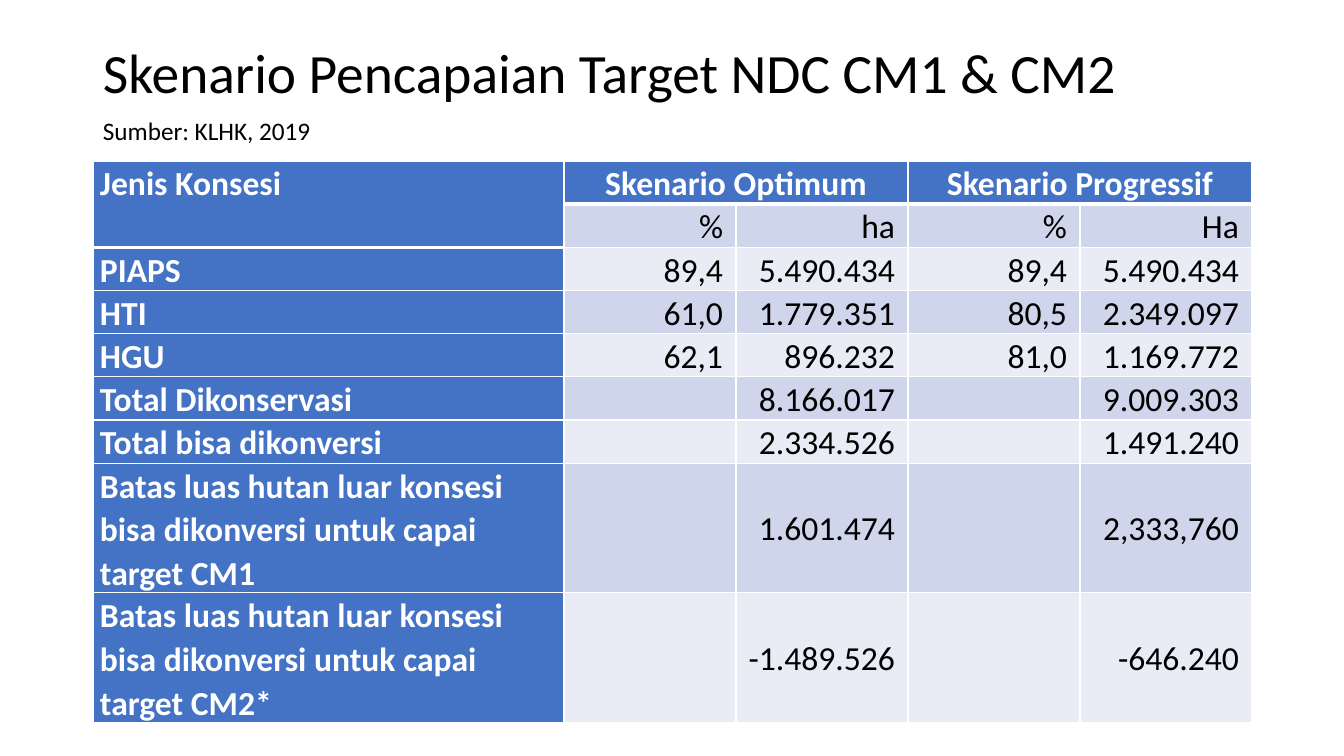
from dataclasses import dataclass

import pptx
import pptx.dml.color
import pptx.enum.text
import pptx.oxml.ns
import pptx.util
from lxml import etree

RGBColor = pptx.dml.color.RGBColor
Align = pptx.enum.text.PP_ALIGN
Anchor = pptx.enum.text.MSO_ANCHOR

SLIDE_W, SLIDE_H = 1344, 756
EMU_PER_PX = 12192000 / SLIDE_W

BLACK = RGBColor(0x00, 0x00, 0x00)
WHITE = RGBColor(0xFF, 0xFF, 0xFF)
BLUE = RGBColor(0x44, 0x72, 0xC4)
BANDS = (RGBColor(0xCF, 0xD5, 0xEA), RGBColor(0xE9, 0xEB, 0xF5))

LEFT, CONTENT_W = 93, 1159
TABLE_TOP = 161
COL_WIDTHS = (471, 172, 172, 172, 172)
ROW_H, TALL_ROW_H = 39, 104
CELL_PAD, NUMBER_PAD = 7, 13
TABLE_SIZE = 24


@dataclass(frozen=True)
class TextBox:
    text: str
    top: int
    width: int
    height: int
    size: float
    line_spacing: float
    wrap: bool


@dataclass(frozen=True)
class Concession:
    label: str
    values: tuple[str, str, str, str]
    height: int = ROW_H


TEXT_BOXES = (
    TextBox("Skenario Pencapaian Target NDC CM1 & CM2", 40, CONTENT_W, 71, 39.6, 0.9, True),
    TextBox("Sumber: KLHK, 2019", 110, 231, 40, 18, 1, False),
)

SCENARIOS = ("Skenario Optimum", "Skenario Progressif")

# The first row holds the units; its label spans the scenario header row too.
ROWS = (
    Concession("", ("%", "ha", "%", "Ha")),
    Concession("PIAPS", ("89,4", "5.490.434", "89,4", "5.490.434")),
    Concession("HTI", ("61,0", "1.779.351", "80,5", "2.349.097")),
    Concession("HGU", ("62,1", "896.232", "81,0", "1.169.772")),
    Concession("Total Dikonservasi", ("", "8.166.017", "", "9.009.303")),
    Concession("Total bisa dikonversi", ("", "2.334.526", "", "1.491.240")),
    Concession("Batas luas hutan luar konsesi bisa dikonversi untuk capai target CM1",
               ("", "1.601.474", "", "2,333,760"), TALL_ROW_H),
    Concession("Batas luas hutan luar konsesi bisa dikonversi untuk capai target CM2*",
               ("", "-1.489.526", "", "-646.240"), TALL_ROW_H),
)


def px(n: int) -> pptx.util.Emu:
    return pptx.util.Emu(round(n * EMU_PER_PX))


def write(tf, text: str, *, size: float, color: RGBColor = BLACK, bold: bool = False,
          align=Align.LEFT, line_spacing: float = 1) -> None:
    p = tf.paragraphs[0]
    p.alignment = align
    p.line_spacing = line_spacing
    if not text:
        p.font.size = pptx.util.Pt(size)
        return
    r = p.add_run()
    r.text = text
    r.font.name = "Calibri"
    r.font.size = pptx.util.Pt(size)
    r.font.bold = bold
    r.font.color.rgb = color


def add_text_box(slide, box: TextBox) -> None:
    sp = slide.shapes.add_textbox(px(LEFT), px(box.top), px(box.width), px(box.height))
    tf = sp.text_frame
    tf.word_wrap = box.wrap
    tf.vertical_anchor = Anchor.MIDDLE
    write(tf, box.text, size=box.size, line_spacing=box.line_spacing)


def set_borders(cell, bottom: int) -> None:
    """Draw white borders, 1 pt wide except for the bottom one."""
    tc_pr = cell._tc.get_or_add_tcPr()
    qn = pptx.oxml.ns.qn
    for side, width in (("L", 1), ("R", 1), ("T", 1), ("B", bottom)):
        ln = etree.SubElement(tc_pr, qn(f"a:ln{side}"), w=str(pptx.util.Pt(width)))
        fill = etree.SubElement(ln, qn("a:solidFill"))
        etree.SubElement(fill, qn("a:srgbClr"), val=str(WHITE))


def fill_cell(cell, text: str, fill: RGBColor, *, color: RGBColor = BLACK, bold: bool = False,
              align=Align.LEFT, anchor=Anchor.TOP, bottom: int = 1) -> None:
    set_borders(cell, bottom)
    cell.fill.solid()
    cell.fill.fore_color.rgb = fill
    cell.margin_left = px(CELL_PAD)
    cell.margin_right = px(NUMBER_PAD if align == Align.RIGHT else CELL_PAD)
    cell.margin_top = cell.margin_bottom = 0
    cell.vertical_anchor = anchor
    write(cell.text_frame, text, size=TABLE_SIZE, color=color, bold=bold, align=align,
          line_spacing=1.07)


def fill_header_cell(cell, text: str, *, align=Align.LEFT, bottom: int = 1) -> None:
    fill_cell(cell, text, BLUE, color=WHITE, bold=True, align=align, bottom=bottom)


def add_scenario_table(slide) -> None:
    heights = (ROW_H, *(row.height for row in ROWS))
    frame = slide.shapes.add_table(len(heights), len(COL_WIDTHS), px(LEFT), px(TABLE_TOP),
                                   px(CONTENT_W), px(sum(heights)))
    table = frame.table
    table.horz_banding = False
    table.first_row = False
    for column, width in zip(table.columns, COL_WIDTHS):
        column.width = px(width)
    for row, height in zip(table.rows, heights):
        row.height = px(height)

    fill_header_cell(table.cell(0, 0), "Jenis Konsesi", bottom=3)
    for i, scenario in enumerate(SCENARIOS):
        first, second = (table.cell(0, 2 * i + n) for n in (1, 2))
        fill_header_cell(first, scenario, align=Align.CENTER, bottom=3)
        fill_header_cell(second, "", bottom=3)
        first.merge(second)

    for i, row in enumerate(ROWS):
        fill_header_cell(table.cell(i + 1, 0), row.label, bottom=1 if row.label else 3)
        for j, value in enumerate(row.values, start=1):
            fill_cell(table.cell(i + 1, j), value, BANDS[i % 2],
                      align=Align.RIGHT, anchor=Anchor.MIDDLE)
    table.cell(0, 0).merge(table.cell(1, 0))


def main() -> None:
    prs = pptx.Presentation()
    prs.slide_width, prs.slide_height = px(SLIDE_W), px(SLIDE_H)
    slide = prs.slides.add_slide(prs.slide_layouts[6])
    for box in TEXT_BOXES:
        add_text_box(slide, box)
    add_scenario_table(slide)
    prs.save("out.pptx")


if __name__ == "__main__":
    main()
